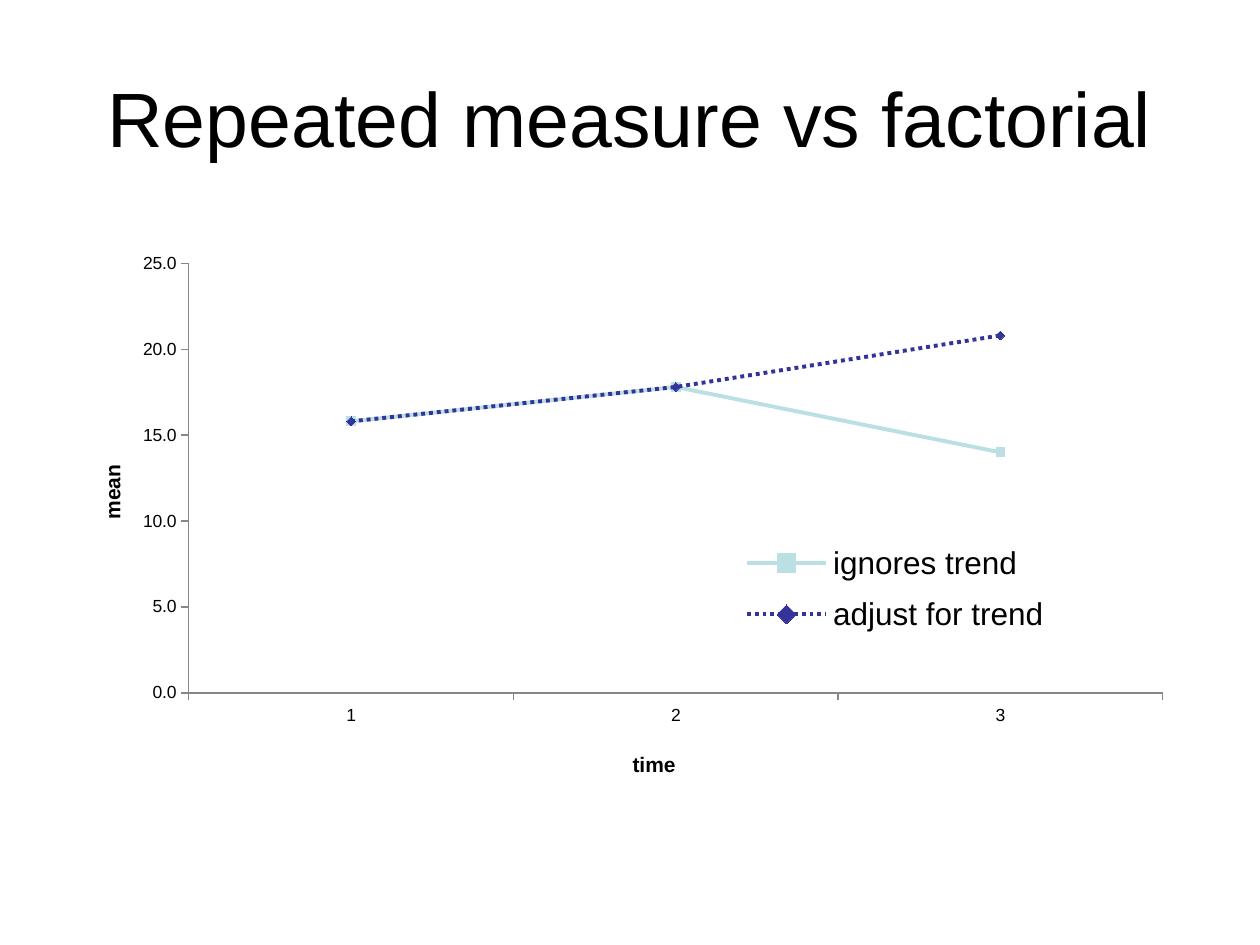
import dataclasses

import pptx
import pptx.chart.data
import pptx.dml.color
import pptx.enum.chart
import pptx.enum.dml
import pptx.enum.text
import pptx.oxml
import pptx.oxml.ns
import pptx.util

Inches = pptx.util.Inches
Pt = pptx.util.Pt
Mark = pptx.enum.chart.XL_MARKER_STYLE
Dash = pptx.enum.dml.MSO_LINE
Tick = pptx.enum.chart.XL_TICK_MARK

FONT = "Arial"
BLACK = "000000"
GREY = "878787"


@dataclasses.dataclass
class Trend:
    name: str
    vals: tuple
    color: str
    mark: Mark
    dash: Dash


TRENDS = [
    Trend("ignores trend", (15.8, 17.8, 14), "BBE0E3", Mark.SQUARE, Dash.SOLID),
    Trend("adjust for trend", (15.8, 17.8, 20.8), "333399", Mark.DIAMOND,
          Dash.ROUND_DOT),
]


def rgb(code: str) -> pptx.dml.color.RGBColor:
    return pptx.dml.color.RGBColor.from_string(code)


def style(font, size: float, bold: bool = False, color: str = BLACK) -> None:
    font.name, font.size, font.bold = FONT, Pt(size), bold
    font.color.rgb = rgb(color)


def write(frame, text: str, size: float, bold: bool = False,
          align=pptx.enum.text.PP_ALIGN.CENTER) -> None:
    """Put one formatted line of text in a frame."""
    para = frame.paragraphs[0]
    para.alignment = align
    run = para.add_run()
    run.text = text
    style(run.font, size, bold)


def place(elem, index: int, inner: bool = False, **spots: float) -> None:
    """Give a chart part a fixed layout, in fractions of the chart."""
    qn = pptx.oxml.ns.qn
    for old in elem.findall(qn("c:layout")):
        elem.remove(old)
    parts = [("layoutTarget", "inner")] if inner else []
    parts += [(f"{key}Mode", "edge") for key in "xy"]
    parts += spots.items()
    body = "".join(f'<c:{key} val="{val}"/>' for key, val in parts)
    space = pptx.oxml.ns.nsdecls("c")
    elem.insert(index, pptx.oxml.parse_xml(
        f"<c:layout {space}><c:manualLayout>{body}</c:manualLayout></c:layout>"))


def set_axis(axis, title: str, x: float, y: float, turn: int = 0) -> None:
    axis.has_major_gridlines = False
    axis.major_tick_mark = Tick.OUTSIDE
    axis.minor_tick_mark = Tick.NONE
    axis.format.line.color.rgb = rgb(GREY)
    axis.format.line.width = Pt(0.75)
    style(axis.tick_labels.font, 10)
    frame = axis.axis_title.text_frame
    write(frame, title, 12, bold=True)
    body = frame._txBody.find(pptx.oxml.ns.qn("a:bodyPr"))
    body.set("rot", str(turn * 60000))
    body.set("vert", "horz")
    place(axis.axis_title._element, 1, x=x, y=y)


def add_title(slide) -> None:
    box = slide.shapes.add_textbox(Inches(0.5), Inches(0.3),
                                   Inches(9), Inches(1.25))
    frame = box.text_frame
    frame.word_wrap = True
    frame.vertical_anchor = pptx.enum.text.MSO_ANCHOR.MIDDLE
    write(frame, "Repeated measure vs factorial", 44)


def add_graph(slide) -> None:
    data = pptx.chart.data.CategoryChartData(number_format="0.0")
    data.categories = ["1", "2", "3"]
    for trend in TRENDS:
        data.add_series(trend.name, trend.vals)
    chart = slide.shapes.add_chart(
        pptx.enum.chart.XL_CHART_TYPE.LINE_MARKERS, Inches(0.58), Inches(1.58),
        Inches(9), Inches(4.95), data).chart
    chart.has_title = False
    style(chart.font, 10)
    plot = chart.plots[0]
    plot.vary_by_categories = False
    place(chart._chartSpace.chart.plotArea, 0, inner=True,
          x=0.102, y=0.103, w=0.859, h=0.689)

    for line, trend in zip(plot.series, TRENDS):
        line.smooth = False
        line.format.line.color.rgb = rgb(trend.color)
        line.format.line.width = Pt(2.25)
        line.format.line.dash_style = trend.dash
        mark = line.marker
        mark.style, mark.size = trend.mark, 5
        mark.format.fill.solid()
        mark.format.fill.fore_color.rgb = rgb(trend.color)
        mark.format.line.color.rgb = rgb(trend.color)

    set_axis(chart.category_axis, "time", 0.49, 0.88)
    axis = chart.value_axis
    set_axis(axis, "mean", 0.02, 0.42, turn=-90)
    axis.minimum_scale, axis.maximum_scale, axis.major_unit = 0, 25, 5
    axis.tick_labels.number_format = "0.0"
    axis.tick_labels.number_format_is_linked = False

    chart.has_legend = True
    legend = chart.legend
    legend.position = pptx.enum.chart.XL_LEGEND_POSITION.RIGHT
    legend.include_in_layout = False
    style(legend.font, 18)
    place(legend._element, 1, x=0.58, y=0.53, w=0.29, h=0.19)


def main() -> None:
    deck = pptx.Presentation()
    deck.slide_width, deck.slide_height = Inches(10), Inches(7.5)
    slide = deck.slides.add_slide(deck.slide_layouts[6])
    add_title(slide)
    add_graph(slide)
    deck.save("out.pptx")


if __name__ == "__main__":
    main()
